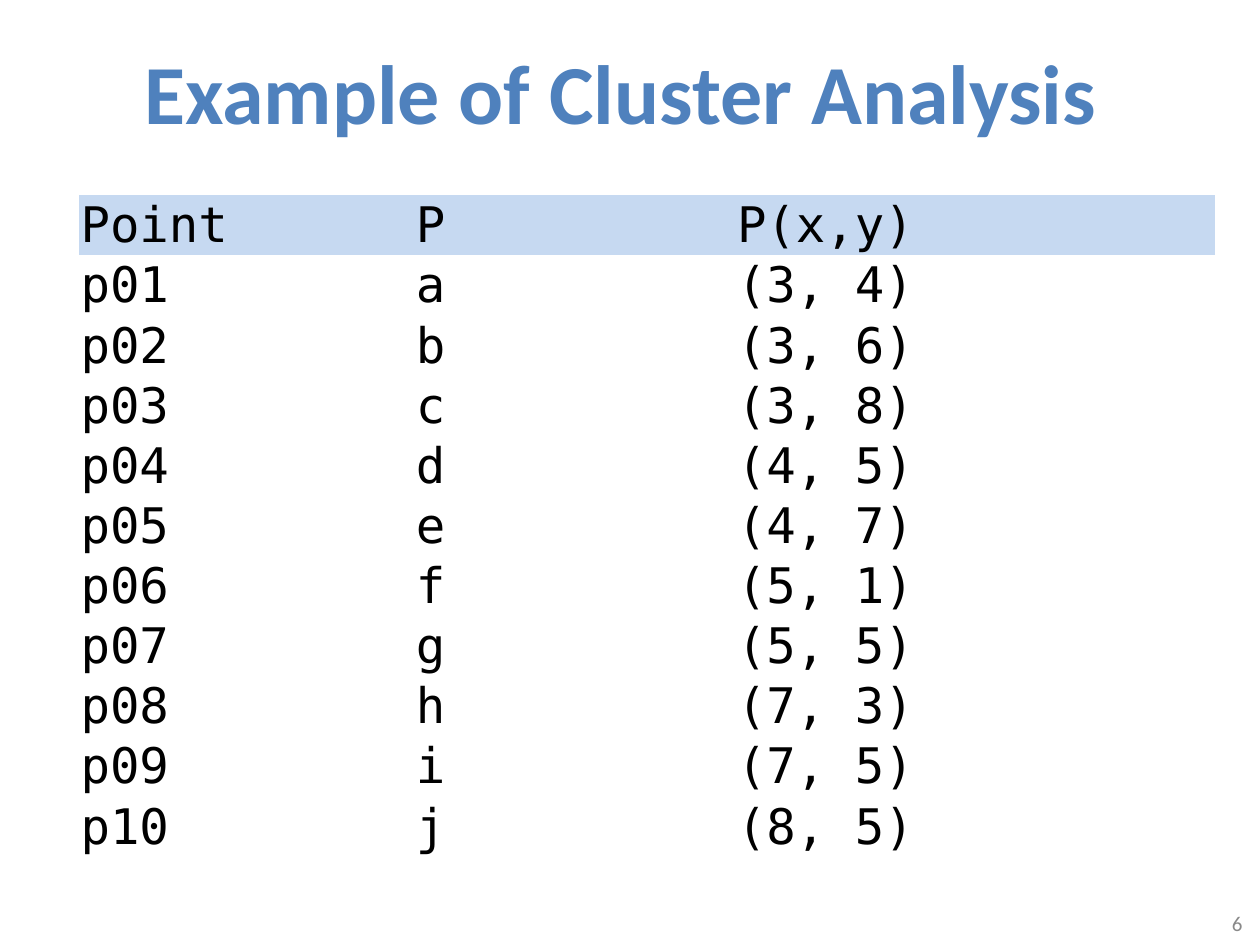
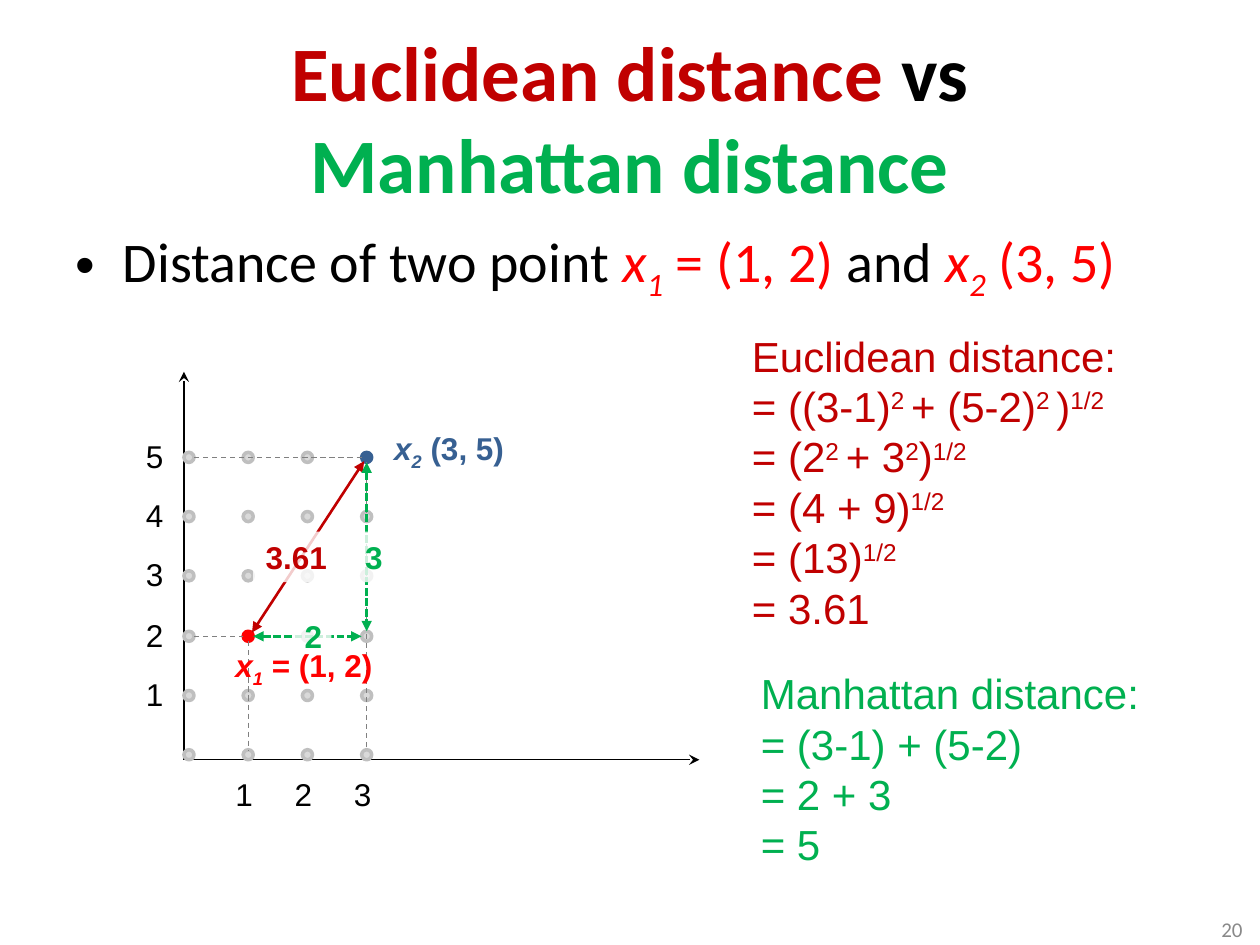
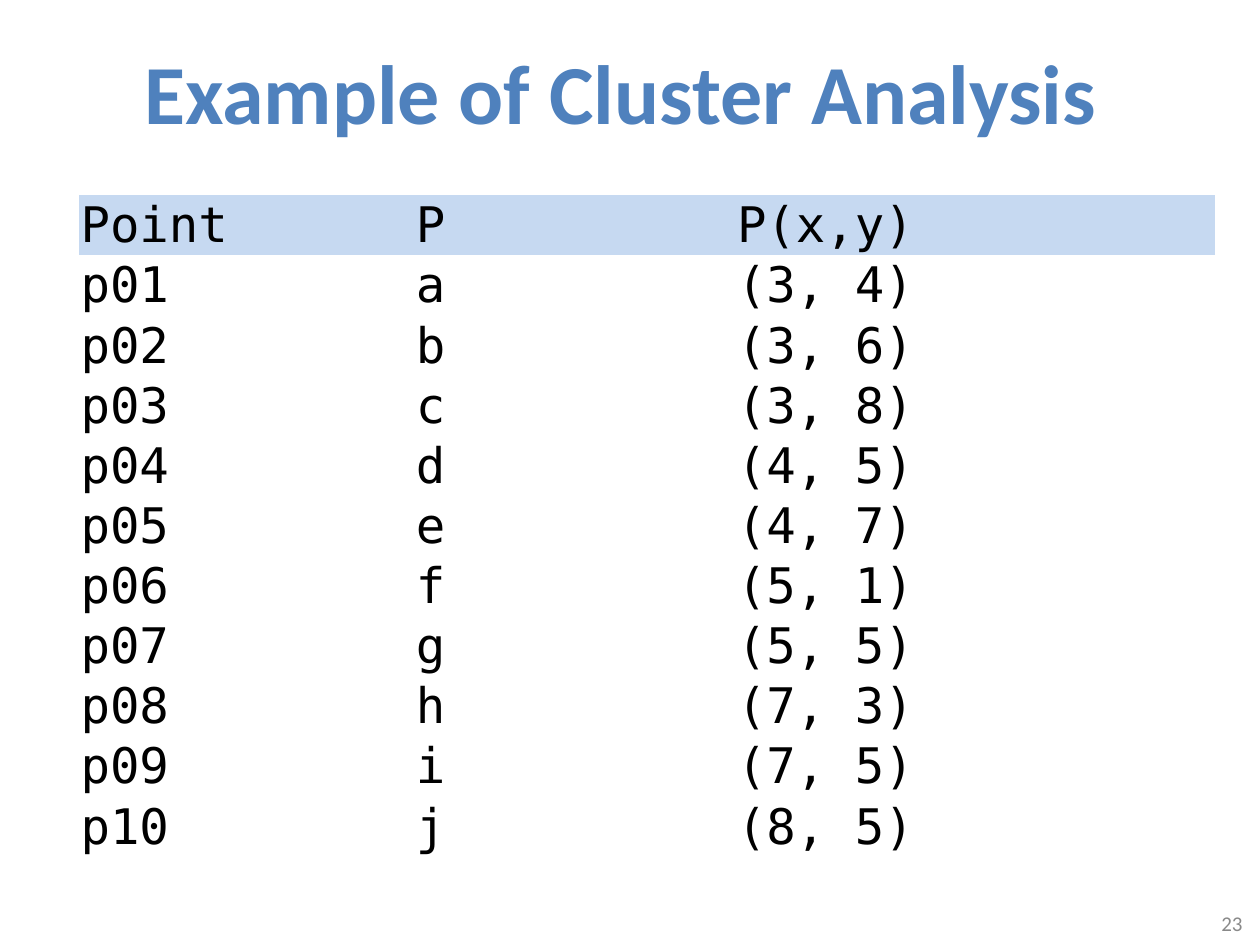
from itertools import product

from lxml.etree import SubElement
from pptx import Presentation
from pptx.dml.color import RGBColor
from pptx.enum.dml import MSO_LINE
from pptx.enum.shapes import MSO_CONNECTOR, MSO_SHAPE
from pptx.enum.text import MSO_ANCHOR as Anchor, MSO_AUTO_SIZE as AutoSize, PP_ALIGN as Align
from pptx.oxml.ns import qn
from pptx.util import Emu, Pt

PX = 9144  # 100 px to the inch

BLACK = RGBColor(0x00, 0x00, 0x00)
WHITE = RGBColor(0xFF, 0xFF, 0xFF)
RED = RGBColor(0xFF, 0x00, 0x00)
DARK_RED = RGBColor(0xC0, 0x00, 0x00)
GREEN = RGBColor(0x00, 0xB0, 0x50)
BLUE = RGBColor(0x4F, 0x81, 0xBD)
NAVY = RGBColor(0x37, 0x60, 0x92)
HEADER_BLUE = RGBColor(0xC6, 0xD9, 0xF1)
DOT_FILL = RGBColor(0xD9, 0xD9, 0xD9)
DOT_LINE = RGBColor(0xBF, 0xBF, 0xBF)
GUIDE_GREY = RGBColor(0x80, 0x80, 0x80)
NUMBER_GREY = RGBColor(0x89, 0x89, 0x89)

HEADING_FONT, LABEL_FONT, TABLE_FONT = "Calibri", "Arial", "DejaVu Sans Mono"
TITLE_ONLY, TITLE_AND_BODY = 5, 1
NO_TABLE_STYLE = "{2D5ABB26-0587-4C30-8999-92F81FD0307C}"

POINTS = [(3, 4), (3, 6), (3, 8), (4, 5), (4, 7), (5, 1), (5, 5), (7, 3), (7, 5), (8, 5)]
POINT_ROWS = [("Point", "P", "P(x,y)")] + [
    (f"p{index:02}", letter, f"({x}, {y})")
    for index, (letter, (x, y)) in enumerate(zip("abcdefghij", POINTS), 1)
]
DOT_RADIUS = 4


def px(*lengths):
    return [Emu(length * PX) for length in lengths]


def sup(text):
    return text, {"baseline": 30}


def sub(text):
    return text, {"baseline": -25, "italic": True}


def italic(text):
    return text, {"italic": True}


def colored(color, *runs):
    """Give plain strings and styled runs the same colour."""
    pairs = [(run, {}) if isinstance(run, str) else run for run in runs]
    return [(text, {**style, "color": color}) for text, style in pairs]


def style_run(run, font, size, color, bold=False, italic=False, baseline=0):
    run.font.name, run.font.size = font, Pt(size)
    run.font.color.rgb = color
    run.font.bold, run.font.italic = bold, italic
    if baseline:
        run.font.element.set("baseline", str(baseline * 1000)) if hasattr(
            run.font, "element") else run._r.get_or_add_rPr().set("baseline", str(baseline * 1000))


def write(frame, paragraphs, align=None, **style):
    """Fill a frame; a paragraph is a string or a list of strings and (text, style) runs."""
    for index, content in enumerate(paragraphs):
        paragraph = frame.add_paragraph() if index else frame.paragraphs[0]
        if align is not None:
            paragraph.alignment = align
        for item in [content] if isinstance(content, str) else content:
            text, changes = (item, {}) if isinstance(item, str) else item
            run = paragraph.add_run()
            run.text = text.rstrip("\n")
            style_run(run, **{**style, **changes})
            if text.endswith("\n"):
                paragraph.add_line_break()


class Deck:
    """Holds the shared style and the slide being filled."""

    def __init__(self):
        self.presentation = Presentation()
        self.presentation.slide_width, self.presentation.slide_height = px(1000, 750)
        self.slide = None

    def new_slide(self, layout):
        self.slide = self.presentation.slides.add_slide(self.presentation.slide_layouts[layout])

    def placeholder(self, index, box, paragraphs, size, color=BLACK, **style):
        shape = self.slide.placeholders[index]
        shape.left, shape.top, shape.width, shape.height = px(*box)
        shape.text_frame.auto_size = AutoSize.NONE
        write(shape.text_frame, paragraphs, font=HEADING_FONT, size=size, color=color, **style)
        return shape

    def title(self, box, runs, size, color=BLACK):
        shape = self.placeholder(0, box, [runs], size, color, bold=True, align=Align.CENTER)
        shape.text_frame.vertical_anchor = Anchor.MIDDLE

    def text(self, box, paragraphs, size=18, color=BLACK, font=LABEL_FONT, veil=False, **style):
        """Add a text box; a veil is a nearly opaque white fill behind the words."""
        shape = self.slide.shapes.add_textbox(*px(*box))
        shape.text_frame.word_wrap = True
        write(shape.text_frame, paragraphs, font=font, size=size, color=color, **style)
        if veil:
            shape.fill.solid()
            shape.fill.fore_color.rgb = WHITE
            white = next(shape.element.spPr.iter(qn("a:srgbClr")))
            SubElement(white, qn("a:alpha"), val="80000")
        return shape

    def number(self, box, value):
        shape = self.text(box, [str(value)], 12, NUMBER_GREY, HEADING_FONT, align=Align.RIGHT)
        shape.text_frame.vertical_anchor = Anchor.MIDDLE

    def dot(self, center, fill, outline):
        x, y = center
        corner = px(x - DOT_RADIUS, y - DOT_RADIUS)
        shape = self.slide.shapes.add_shape(
            MSO_SHAPE.OVAL, *corner, *px(2 * DOT_RADIUS, 2 * DOT_RADIUS))
        shape.shadow.inherit = False
        shape.fill.solid()
        shape.fill.fore_color.rgb = fill
        shape.line.color.rgb = outline
        shape.line.width = Pt(2)

    def line(self, start, end, color, width=0.75, dash=None, head=None, tail=None):
        connector = self.slide.shapes.add_connector(
            MSO_CONNECTOR.STRAIGHT, *px(*start), *px(*end))
        connector.line.color.rgb = color
        connector.line.width = Pt(width)
        if dash is not None:
            connector.line.dash_style = dash
        properties = connector.element.spPr
        outline = properties.find(qn("a:ln"))
        for tag, kind in (("a:headEnd", head), ("a:tailEnd", tail)):
            if kind:
                SubElement(outline, qn(tag), type=kind)
        SubElement(properties, qn("a:effectLst"))

    def table(self, box, column_widths, rows, size):
        frame = self.slide.shapes.add_table(len(rows), len(column_widths), *px(*box))
        next(frame.element.iter(qn("a:tableStyleId"))).text = NO_TABLE_STYLE
        table = frame.table
        table.first_row = table.horz_banding = False
        for column, width in zip(table.columns, px(*column_widths)):
            column.width = width
        for (row, values), column in product(enumerate(rows), range(len(column_widths))):
            cell = table.cell(row, column)
            cell.margin_left, cell.margin_top, cell.margin_right, cell.margin_bottom = px(1, 1, 1, 0)
            cell.vertical_anchor = Anchor.MIDDLE
            if row == 0:
                cell.fill.solid()
                cell.fill.fore_color.rgb = HEADER_BLUE
            else:
                cell.fill.background()
            write(cell.text_frame, [values[column]], font=TABLE_FONT, size=size, color=BLACK)


def build_points_slide(deck, number):
    deck.new_slide(TITLE_ONLY)
    deck.number((763, 713, 233, 40), number)
    deck.table((63, 155, 901, 525), (266, 255, 380), POINT_ROWS, 28)
    deck.title((83, 21, 819, 102), "Example of Cluster Analysis", 48, BLUE)


def grid_point(x, y):
    return 150 + 47 * x, round(599 - 47.2 * y)


def draw_distance_plot(deck):
    deck.line((146, 603), (555, 603), BLACK, tail="stealth")
    deck.line((146, 603), (146, 295), BLACK, tail="stealth")
    for value in range(1, 4):
        deck.text((grid_point(value, 0)[0] - 20, 610, 47, 40), [str(value)])
    for value in range(1, 6):
        deck.text((106, grid_point(0, value)[1] - 21, 47, 40), [str(value)])

    first, second = (1, 2), (3, 5)
    for point in product(range(4), range(6)):
        if point not in (first, second):
            deck.dot(grid_point(*point), DOT_FILL, DOT_LINE)
    deck.dot(grid_point(*first), RED, RED)
    deck.dot(grid_point(*second), NAVY, NAVY)

    base_x, base_y = grid_point(0, 0)
    for x, y in (grid_point(*first), grid_point(*second)):
        deck.line((x, y + DOT_RADIUS), (x, base_y - DOT_RADIUS), GUIDE_GREY, dash=MSO_LINE.DASH)
        deck.line((base_x + DOT_RADIUS, y), (x - DOT_RADIUS, y), GUIDE_GREY, dash=MSO_LINE.DASH)

    (x1, y1), (x2, y2) = grid_point(*first), grid_point(*second)
    both_ends = {"width": 1.5, "head": "triangle", "tail": "triangle"}
    deck.line((x2 - 2, y2 + 3), (x1 + 3, y1 - 3), DARK_RED, **both_ends)
    deck.line((x1 + DOT_RADIUS, y1), (x2 - DOT_RADIUS, y1), GREEN,
              dash=MSO_LINE.SQUARE_DOT, **both_ends)
    deck.line((x2, y2 + DOT_RADIUS), (x2, y1 - DOT_RADIUS), GREEN,
              dash=MSO_LINE.SQUARE_DOT, **both_ends)

    deck.text((303, 336, 157, 40), [[italic("x"), sub("2"), " (3, 5)"]], color=NAVY, bold=True)
    deck.text((232, 485, 31, 40), ["2"], color=GREEN, bold=True, veil=True)
    deck.text((177, 508, 157, 40), [[italic("x"), sub("1"), " = (1, 2)"]], color=RED, bold=True)
    deck.text((280, 422, 31, 40), ["3"], color=GREEN, bold=True, veil=True)
    deck.text((201, 422, 71, 40), ["3.61"], color=DARK_RED, bold=True, veil=True)


def build_distance_slide(deck, number):
    deck.new_slide(TITLE_AND_BODY)
    deck.title((50, 30, 900, 125), [
        *colored(DARK_RED, "Euclidean distance "), "vs\n",
        *colored(GREEN, "Manhattan distance")], 44)
    deck.placeholder(1, (50, 175, 900, 82), [[
        "Distance of two point ", *colored(RED, italic("x"), sub("1"), " = (1, 2)"),
        " and ", *colored(RED, italic("x"), sub("2"), " (3, 5)")]], 32)
    deck.number((917, 722, 79, 31), number)
    draw_distance_plot(deck)
    deck.text((587, 257, 370, 252), [
        "Euclidean distance:",
        ["= ((3-1)", sup("2 "), "+ (5-2)", sup("2 "), ")", sup("1/2")],
        ["= (2", sup("2 "), "+ 3", sup("2"), ")", sup("1/2")],
        ["= (4 + 9)", sup("1/2")],
        ["= (13)", sup("1/2")],
        "= 3.61"], 24, DARK_RED, veil=True)
    deck.text((594, 525, 370, 172), [
        "Manhattan distance:", "= (3-1) + (5-2)", "= 2 + 3", "= 5"], 24, GREEN, veil=True)


def main():
    deck = Deck()
    build_points_slide(deck, 6)
    build_distance_slide(deck, 20)
    build_points_slide(deck, 23)
    deck.presentation.save("out.pptx")


if __name__ == "__main__":
    main()
